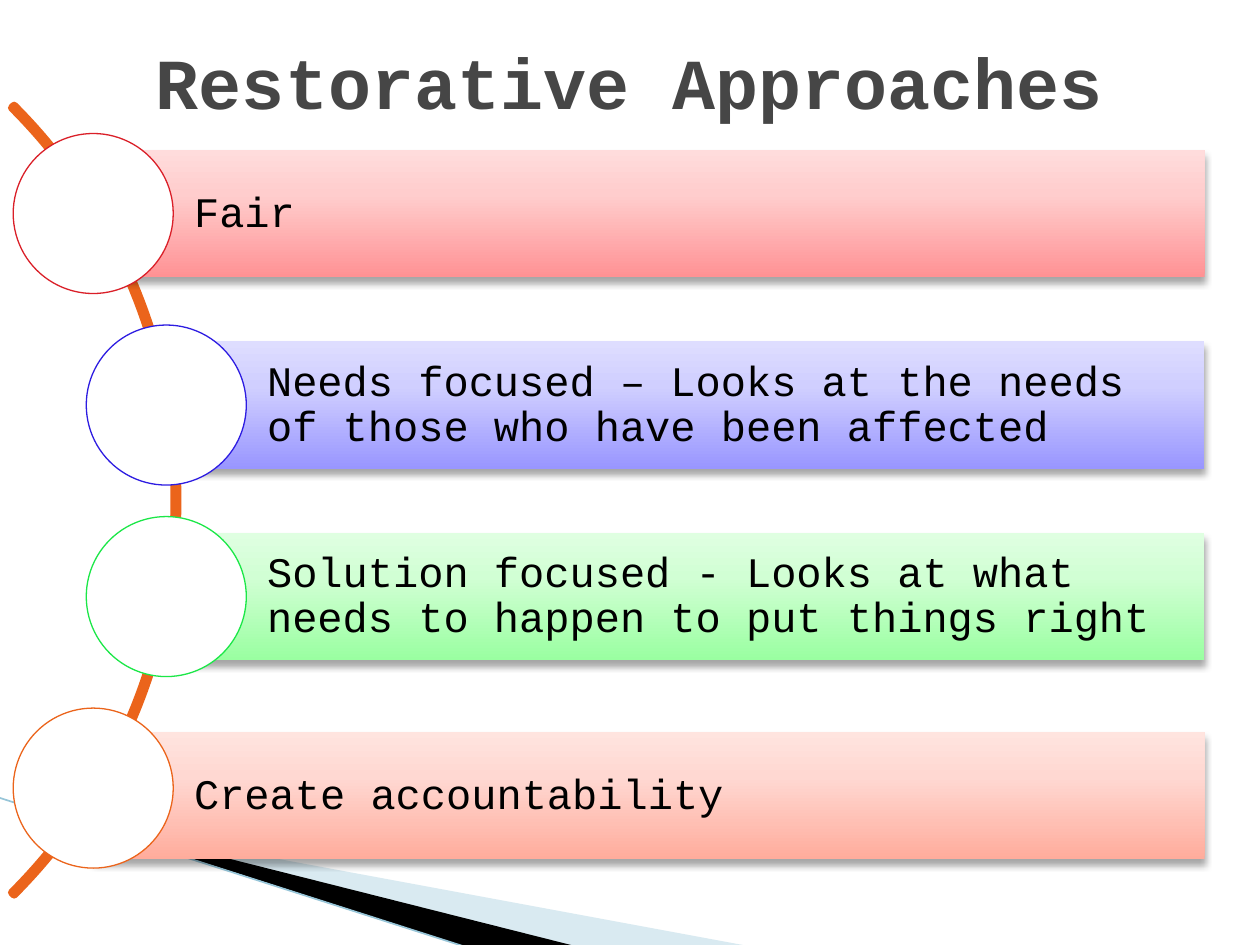
from dataclasses import dataclass

from lxml.etree import SubElement
from pptx import Presentation
from pptx.dml.color import RGBColor
from pptx.enum.shapes import MSO_CONNECTOR, MSO_SHAPE
from pptx.enum.text import MSO_ANCHOR, MSO_AUTO_SIZE, PP_ALIGN
from pptx.oxml import parse_xml
from pptx.oxml.ns import nsdecls, qn
from pptx.util import Inches, Pt

COLUMNS, ROWS = 100, 75


@dataclass(frozen=True)
class Theme:
    font: str = "Courier New"
    title_size: float = 41
    body_size: float = 24
    title: str = "464646"
    body: str = "000000"
    paper: str = "FFFFFF"
    arc: str = "EB641B"
    arc_width: float = 4.33
    ring_width: float = 0.75
    wave: str = "A0CBDC"
    wave_shade: str = "000000"
    wave_edge: str = "97C5D8"
    wave_edge_width: float = 0.95


@dataclass(frozen=True)
class Principle:
    wording: str
    ring: str
    gradient: tuple
    indented: bool = False
    drop: float = 0


PRINCIPLES = (
    Principle("Fair", "DA1F28", ("FF9294", "FFCDCD", "FFDCDC")),
    Principle("Needs focused – Looks at the needs of those who have been affected",
              "2D1CE1", ("9996FF", "D0CFFF", "DEDDFF"), indented=True),
    Principle("Solution focused - Looks at what needs to happen to put things right",
              "1BE747", ("9AFFA1", "D1FFD4", "DFFFE1"), indented=True),
    Principle("Create accountability", "EB641B", ("FFAC9C", "FFD8D2", "FFE4DF"), drop=0.6),
)


def write(frame, wording, *, font, size, color, bold=False, align=PP_ALIGN.LEFT, spacing=1.0):
    frame.word_wrap = True
    frame.auto_size = MSO_AUTO_SIZE.NONE
    frame.vertical_anchor = MSO_ANCHOR.MIDDLE
    paragraph = frame.paragraphs[0]
    paragraph.alignment = align
    paragraph.line_spacing = spacing
    run = paragraph.add_run()
    run.text = wording
    run.font.name = font
    run.font.size = Pt(size)
    run.font.bold = bold
    run.font.color.rgb = RGBColor.from_string(color)


class SlideBuilder:
    def __init__(self, deck, theme):
        self.theme = theme
        self.column = deck.slide_width / COLUMNS
        self.row = deck.slide_height / ROWS
        self.slide = deck.slides.add_slide(deck.slide_layouts[5])

    def place(self, x, y):
        return round(x * self.column), round(y * self.row)

    def title(self, wording, x, y, width, height):
        heading = self.slide.shapes.title
        heading.left, heading.top = self.place(x, y)
        heading.width, heading.height = self.place(width, height)
        write(heading.text_frame, wording, font=self.theme.font, size=self.theme.title_size,
              color=self.theme.title, bold=True, align=PP_ALIGN.CENTER)

    def preset(self, kind, x, y, width, height, fill=None, line=None, line_width=0):
        shape = self.slide.shapes.add_shape(kind, *self.place(x, y), *self.place(width, height))
        shape.shadow.inherit = False
        self.paint(shape, fill)
        if line:
            shape.line.color.rgb = RGBColor.from_string(line)
            shape.line.width = Pt(line_width)
        return shape

    def paint(self, shape, fill):
        shape.line.fill.background()
        if fill:
            shape.fill.solid()
            shape.fill.fore_color.rgb = RGBColor.from_string(fill)
        else:
            shape.fill.background()

    def polygon(self, points, fill, opacity=100):
        start, *rest = [self.place(*point) for point in points]
        outline = self.slide.shapes.build_freeform(*start)
        outline.add_line_segments(rest, close=True)
        shape = outline.convert_to_shape()
        shape.shadow.inherit = False
        self.paint(shape, fill)
        if opacity < 100:
            color = shape.fill._xPr.find(qn("a:solidFill"))[0]
            SubElement(color, qn("a:alpha")).set("val", str(opacity * 1000))

    def line(self, start, end, color, width):
        edge = self.slide.shapes.add_connector(
            MSO_CONNECTOR.STRAIGHT, *self.place(*start), *self.place(*end))
        edge.line.color.rgb = RGBColor.from_string(color)
        edge.line.width = Pt(width)
        SubElement(edge._element.spPr, qn("a:effectLst"))

    def arc(self, x, y, size, start, end, thickness):
        arc = self.preset(MSO_SHAPE.BLOCK_ARC, x, y, size, size,
                          line=self.theme.arc, line_width=self.theme.arc_width)
        for index, value in enumerate((start, end, thickness)):
            arc.adjustments[index] = value

    def bar(self, wording, gradient, x, y, width, height):
        bar = self.preset(MSO_SHAPE.RECTANGLE, x, y, width, height)
        properties = bar._element.spPr
        stops = "".join(f'<a:gs pos="{position}"><a:srgbClr val="{color}"/></a:gs>'
                        for position, color in zip((0, 65000, 100000), gradient))
        properties.replace(properties.find(qn("a:noFill")), parse_xml(
            f'<a:gradFill {nsdecls("a")} rotWithShape="1"><a:gsLst>{stops}</a:gsLst>'
            '<a:lin ang="16200000" scaled="0"/></a:gradFill>'))
        properties.find(qn("a:effectLst")).append(parse_xml(
            f'<a:outerShdw {nsdecls("a")} blurRad="{Pt(4)}" dist="{Pt(3)}" dir="5400000" '
            'rotWithShape="0"><a:srgbClr val="000000"><a:alpha val="35000"/></a:srgbClr>'
            '</a:outerShdw>'))
        frame = bar.text_frame
        frame.margin_left = Inches(0.8)
        frame.margin_right = frame.margin_top = frame.margin_bottom = Inches(0.07)
        write(frame, wording, font=self.theme.font, size=self.theme.body_size,
              color=self.theme.body, spacing=0.9)

    def ring(self, center_x, center_y, size, color):
        self.preset(MSO_SHAPE.OVAL, center_x - size / 2, center_y - size / 2, size, size,
                    self.theme.paper, color, self.theme.ring_width)


def main():
    theme = Theme()
    deck = Presentation()
    deck.slide_width, deck.slide_height = Inches(10), Inches(7.5)
    page = SlideBuilder(deck, theme)

    page.title("Restorative Approaches", 0, 1.3, 100, 10.2)
    page.polygon([(5.5, 65.1), (59.5, 75.1), (45.6, 75.1), (5.5, 65)], theme.wave, opacity=40)
    page.polygon([(5.3, 64.9), (45.7, 75.1), (37.2, 75.2), (5.4, 65)], theme.wave_shade)
    page.line((-0.1, 63.3), (37.1, 75.2), theme.wave_edge, theme.wave_edge_width)
    page.arc(-74.5, -4.6, 88.6, start=189, end=27, thickness=0.003)

    first_center, pitch, bar_height, bar_right = 16.95, 15.2, 10.1, 95.6
    for index, principle in enumerate(PRINCIPLES):
        center_x = 13.2 if principle.indented else 7.4
        center_y = first_center + index * pitch
        page.bar(principle.wording, principle.gradient, center_x,
                 center_y - bar_height / 2 + principle.drop, bar_right - center_x, bar_height)
        page.ring(center_x, center_y, 12.7, principle.ring)

    deck.save("out.pptx")


if __name__ == "__main__":
    main()
